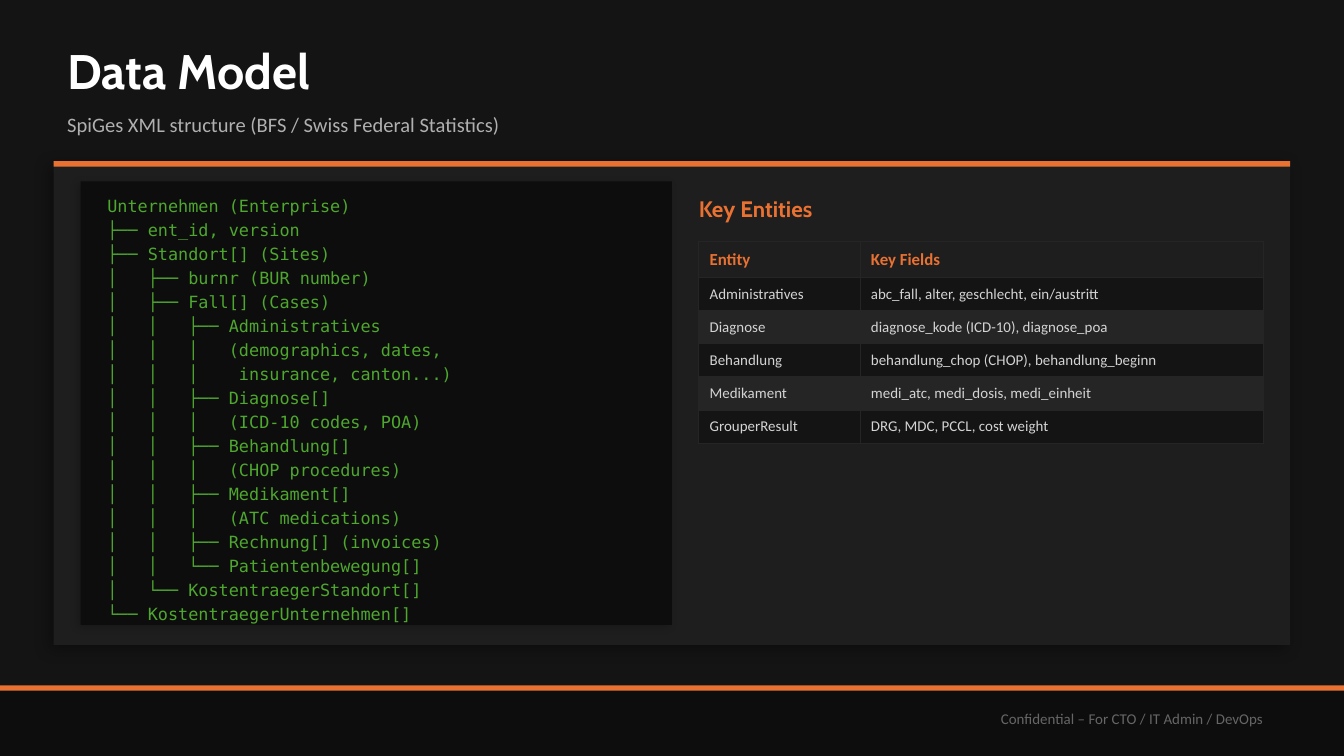
from pptx import Presentation
from pptx.dml.color import RGBColor
from pptx.enum.shapes import MSO_SHAPE
from pptx.enum.text import MSO_ANCHOR, MSO_AUTO_SIZE, PP_ALIGN
from pptx.oxml import parse_xml
from pptx.oxml.ns import nsdecls, qn
from pptx.util import Emu, Pt

PX = 4572  # 200 px to the inch

BACK = RGBColor(0x14, 0x14, 0x14)
DARK = RGBColor(0x0D, 0x0D, 0x0D)
PANEL = RGBColor(0x1E, 0x1E, 0x1E)
STRIPE = RGBColor(0x25, 0x25, 0x25)
ORANGE = RGBColor(0xE9, 0x71, 0x32)
GREEN = RGBColor(0x4E, 0xA7, 0x2E)
WHITE = RGBColor(0xFF, 0xFF, 0xFF)
SILVER = RGBColor(0xB0, 0xB0, 0xB0)
LIGHT = RGBColor(0xD4, 0xD4, 0xD4)
GREY = RGBColor(0x66, 0x66, 0x66)
HEAD, BODY, MONO = "Cabin", "Calibri", "DejaVu Sans Mono"

TREE = """\
Unternehmen (Enterprise)
├── ent_id, version
├── Standort[] (Sites)
│   ├── burnr (BUR number)
│   ├── Fall[] (Cases)
│   │   ├── Administratives
│   │   │   (demographics, dates,
│   │   │    insurance, canton...)
│   │   ├── Diagnose[]
│   │   │   (ICD-10 codes, POA)
│   │   ├── Behandlung[]
│   │   │   (CHOP procedures)
│   │   ├── Medikament[]
│   │   │   (ATC medications)
│   │   ├── Rechnung[] (invoices)
│   │   └── Patientenbewegung[]
│   └── KostentraegerStandort[]
└── KostentraegerUnternehmen[]"""

ROWS = [
    ("Entity", "Key Fields"),
    ("Administratives", "abc_fall, alter, geschlecht, ein/austritt"),
    ("Diagnose", "diagnose_kode (ICD-10), diagnose_poa"),
    ("Behandlung", "behandlung_chop (CHOP), behandlung_beginn"),
    ("Medikament", "medi_atc, medi_dosis, medi_einheit"),
    ("GrouperResult", "DRG, MDC, PCCL, cost weight"),
]


def px(*sizes):
    return [Emu(size * PX) for size in sizes]


def style(font, name, size, color, bold=False):
    font.name, font.size, font.bold = name, Pt(size), bold
    font.color.rgb = color


def add_rect(slide, box, color, shadow=None):
    """Add a plain rectangle; shadow is (opacity %, blur pt, distance pt)."""
    rect = slide.shapes.add_shape(MSO_SHAPE.RECTANGLE, *px(*box))
    rect.fill.solid()
    rect.fill.fore_color.rgb = color
    rect.line.fill.background()
    rect.shadow.inherit = False
    if shadow:
        alpha, blur, dist = shadow
        effects = rect.element.spPr.find(qn("a:effectLst"))
        effects.append(parse_xml(
            f'<a:outerShdw {nsdecls("a")} blurRad="{Pt(blur)}" dist="{Pt(dist)}" '
            f'dir="8100000" algn="bl" rotWithShape="0"><a:srgbClr val="000000">'
            f'<a:alpha val="{alpha * 1000}"/></a:srgbClr></a:outerShdw>'))


def set_frame(frame, anchor, inset=True):
    frame.word_wrap = True
    frame.auto_size = MSO_AUTO_SIZE.NONE
    frame.vertical_anchor = anchor
    if not inset:
        frame.margin_left = frame.margin_right = 0
        frame.margin_top = frame.margin_bottom = 0


def add_text(slide, box, anchor=MSO_ANCHOR.MIDDLE, inset=True):
    frame = slide.shapes.add_textbox(*px(*box)).text_frame
    set_frame(frame, anchor, inset)
    return frame


def add_line(slide, box, text, look, inset=False, align=PP_ALIGN.LEFT):
    """Add a text box with one paragraph in one look."""
    para = add_text(slide, box, inset=inset).paragraphs[0]
    para.text, para.alignment = text, align
    style(para.font, *look)


def add_header(slide, x, y, w):
    title = slide.shapes.title
    title.left, title.top, title.width, title.height = px(x, y, w, 110)
    set_frame(title.text_frame, MSO_ANCHOR.MIDDLE, inset=False)
    para = title.text_frame.paragraphs[0]
    para.text, para.alignment = "Data Model", PP_ALIGN.LEFT
    style(para.font, HEAD, 26, WHITE, True)
    add_line(slide, (x, y + 100, w, 70),
             "SpiGes XML structure (BFS / Swiss Federal Statistics)",
             (BODY, 11, SILVER))


def add_footer(slide, x, y, w, h):
    add_rect(slide, (x, y, w, h), DARK)
    add_rect(slide, (x, y, w, 8), ORANGE)
    add_line(slide, (x + w - 900, y + 10, 800, 80),
             "Confidential – For CTO / IT Admin / DevOps",
             (BODY, 8, GREY), inset=True, align=PP_ALIGN.RIGHT)


def add_tree(slide, x, y, w, h):
    add_rect(slide, (x, y, w, h), DARK, (20, 4, 2))
    frame = add_text(slide, (x + 20, y + 12, w - 40, h - 24), MSO_ANCHOR.TOP)
    for i, line in enumerate(TREE.split("\n")):
        para = frame.add_paragraph() if i else frame.paragraphs[0]
        para.text, para.space_after = line, Pt(2)
        style(para.font, MONO, 9, GREEN)


def add_borders(cell):
    props = cell._tc.get_or_add_tcPr()
    for i, side in enumerate(("lnL", "lnR", "lnT", "lnB")):
        line = parse_xml(
            f'<a:{side} {nsdecls("a")} w="{Pt(0.5)}"><a:solidFill>'
            f'<a:srgbClr val="{STRIPE}"/></a:solidFill></a:{side}>')
        props.insert(i, line)


def fill_cell(cell, text, row):
    cell.text = text
    cell.vertical_anchor = MSO_ANCHOR.MIDDLE
    cell.margin_left = cell.margin_right = Emu(16 * PX)
    cell.margin_top = cell.margin_bottom = Emu(11 * PX)
    cell.fill.solid()
    cell.fill.fore_color.rgb = (BACK if row % 2 else STRIPE) if row else PANEL
    look = (BODY, 8, LIGHT) if row else (BODY, 9, ORANGE, True)
    style(cell.text_frame.paragraphs[0].font, *look)
    add_borders(cell)


def add_entities(slide, x, y, w):
    add_line(slide, (x, y, w, 60), "Key Entities", (HEAD, 12, ORANGE, True))
    heights = [53] + [49] * (len(ROWS) - 1)
    table = slide.shapes.add_table(
        len(ROWS), 2, *px(x, y + 80, w, sum(heights))).table
    for col, size in zip(table.columns, px(240, w - 240)):
        col.width = size
    for i, (height, texts) in enumerate(zip(px(*heights), ROWS)):
        table.rows[i].height = height
        for j, text in enumerate(texts):
            fill_cell(table.cell(i, j), text, i)


def add_panel(slide, x, y, w, h):
    add_rect(slide, (x, y, w, h), PANEL, (35, 8, 3))
    add_rect(slide, (x, y, w, 8), ORANGE)
    add_tree(slide, x + 40, y + 30, 880, h - 60)
    add_entities(slide, x + 960, y + 40, 840)


def main():
    deck = Presentation()
    deck.slide_width, deck.slide_height = px(2000, 1125)
    slide = deck.slides.add_slide(deck.slide_layouts[5])
    slide.background.fill.solid()
    slide.background.fill.fore_color.rgb = BACK
    add_footer(slide, 0, 1020, 2000, 105)
    add_header(slide, 100, 50, 1800)
    add_panel(slide, 80, 240, 1840, 720)
    deck.save("out.pptx")


if __name__ == "__main__":
    main()
